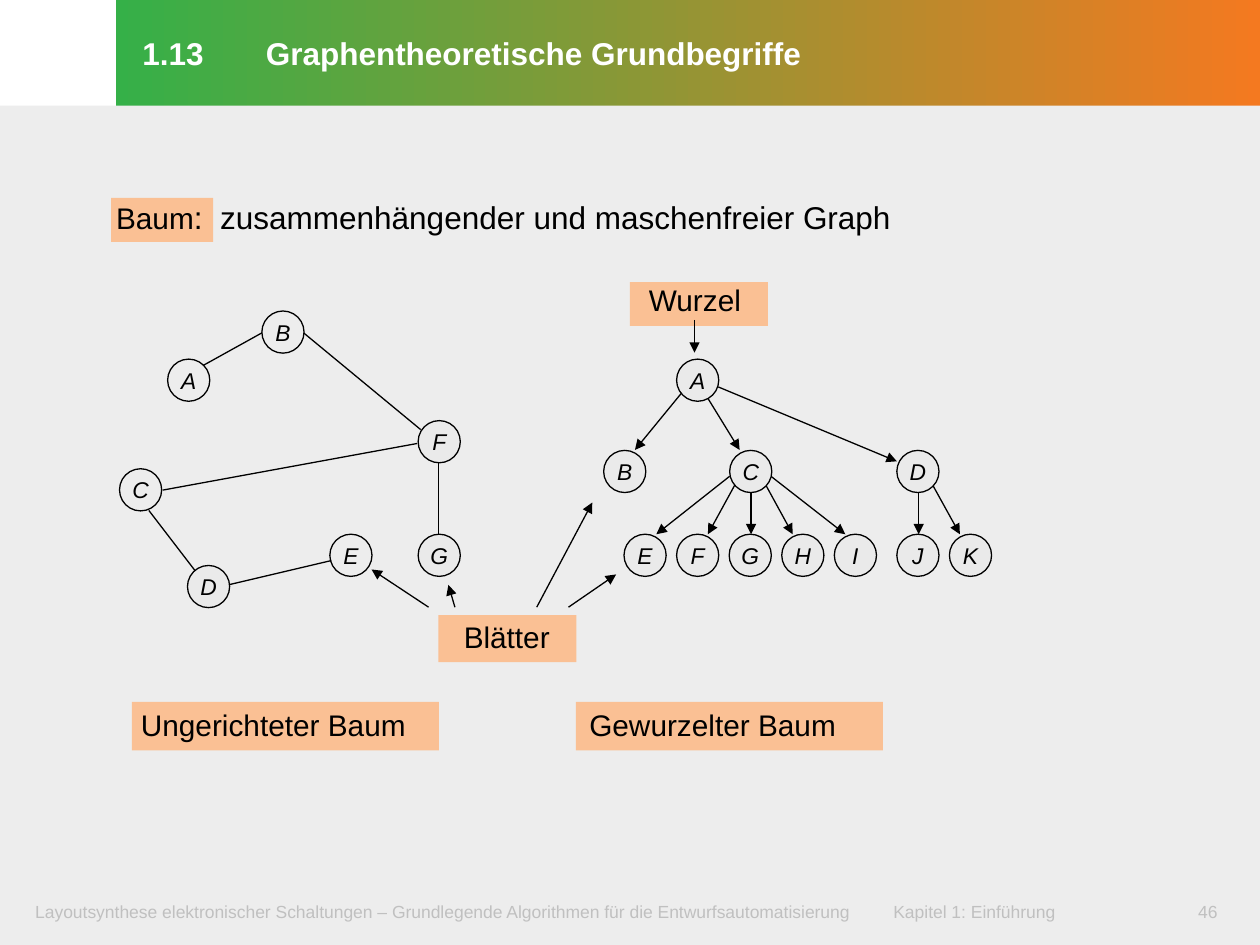
from lxml.etree import SubElement
from pptx import Presentation
from pptx.dml.color import RGBColor
from pptx.enum.shapes import MSO_CONNECTOR, MSO_SHAPE
from pptx.enum.text import MSO_ANCHOR, MSO_AUTO_SIZE, PP_ALIGN
from pptx.oxml.ns import qn
from pptx.util import Cm, Pt

rgb = RGBColor.from_string

prs = Presentation()
prs.slide_width, prs.slide_height = Cm(25.4), Cm(19.05)
s = prs.slides.add_slide(prs.slide_layouts[5])


def add_box(kind, x, y, w, h, fill=None, line=None):
    sp = s.shapes.add_shape(kind, Cm(x), Cm(y), Cm(w), Cm(h))
    sp.shadow.inherit = False
    if fill:
        sp.fill.solid()
        sp.fill.fore_color.rgb = rgb(fill)
    else:
        sp.fill.background()
    if line:
        sp.line.color.rgb = rgb(line)
        sp.line.width = Pt(0.75)
    else:
        sp.line.fill.background()
    return sp


def write(tf, runs, color, insets=(0, 0, 0, 0), anchor=MSO_ANCHOR.TOP,
          align=PP_ALIGN.LEFT, tab=None, bold=False, italic=False):
    tf.margin_left, tf.margin_top, tf.margin_right, tf.margin_bottom = map(Cm, insets)
    tf.word_wrap = True
    tf.auto_size = MSO_AUTO_SIZE.NONE
    tf.vertical_anchor = anchor
    p = tf.paragraphs[0]
    p.alignment = align
    if tab:
        tabs = SubElement(p._p.get_or_add_pPr(), qn("a:tabLst"))
        SubElement(tabs, qn("a:tab"), pos=str(Cm(tab)), algn="l")
    for text, size in runs:
        r = p.add_run()
        r.text = text
        r.font.name = "Arial"
        r.font.size = Pt(size)
        r.font.bold = bold
        r.font.italic = italic
        r.font.color.rgb = rgb(color)
    return p


title = s.shapes.title
title.left, title.top, title.width, title.height = Cm(2.34), Cm(0), Cm(23.06), Cm(2.13)
title.fill.gradient()
title.fill.gradient_angle = 0
for stop, color in zip(title.fill.gradient_stops, ("35B048", "F47920")):
    stop.color.rgb = rgb(color)
p = write(title.text_frame, [("1.13\tGraphentheoretische Grundbegriffe", 18)], "FFFFFF",
          (0.53, 0.13, 0.25, 0.18), MSO_ANCHOR.MIDDLE, tab=2.49, bold=True)
p.line_spacing = Pt(23.5)

add_box(MSO_SHAPE.RECTANGLE, 0, 2.13, 25.4, 16.92, "EDEDED")

footer = "Layoutsynthese elektronischer Schaltungen – Grundlegende Algorithmen für die Entwurfsautomatisierung"
for text, x, w, align, tab in [
    (footer + "\tKapitel 1: Einführung", 0.41, 22.48, PP_ALIGN.LEFT, 17.3),
    ("46", 23.6, 1.5, PP_ALIGN.CENTER, None),
]:
    tb = s.shapes.add_textbox(Cm(x), Cm(18.01), Cm(w), Cm(0.81))
    write(tb.text_frame, [(text, 10)], "C0C0C0", (0.3, 0.15, 0.3, 0.15), align=align, tab=tab)

add_box(MSO_SHAPE.RECTANGLE, 2.24, 3.99, 2.06, 0.89, "FAC094")
tb = s.shapes.add_textbox(Cm(2.34), Cm(3.99), Cm(19.56), Cm(0.76))
write(tb.text_frame, [("Baum", 17), (":\tzusammenhängender und maschenfreier Graph", 18)],
      "000000", tab=2.1)

for text, x, y, w, h, left, top in [
    ("Ungerichteter Baum", 2.66, 14.15, 6.19, 0.98, 0.18, 0.1),
    ("Gewurzelter Baum", 11.61, 14.15, 6.19, 0.98, 0.27, 0.1),
    ("Blätter", 8.84, 12.4, 2.78, 0.95, 0.51, 0.08),
    ("Wurzel", 12.7, 5.69, 2.78, 0.88, 0.38, 0),
]:
    sp = add_box(MSO_SHAPE.RECTANGLE, x, y, w, h, "FAC094")
    write(sp.text_frame, [(text, 17)], "000000", (left, top, 0, 0))

edges = [
    (8.84, 9.3, 8.84, 11),
    (4.09, 7.37, 5.28, 6.71),
    (6.12, 6.71, 8.48, 8.66),
    (3.28, 9.88, 8.41, 8.94),
    (3, 10.29, 4.19, 11.84),
    (4.39, 11.84, 6.68, 11.3),
]
arrows = [
    (14, 6.45, 14, 7.11),
    (13.84, 7.8, 12.8, 9.07),
    (14.27, 8.03, 14.91, 9.07),
    (14.48, 7.8, 18.08, 9.3),
    (14.71, 9.6, 13.23, 10.77),
    (14.91, 9.6, 14.27, 10.77),
    (15.14, 9.6, 15.14, 10.77),
    (15.34, 9.6, 15.98, 10.77),
    (15.54, 9.6, 17.04, 10.77),
    (18.52, 9.5, 18.52, 10.77),
    (18.72, 9.63, 19.35, 10.77),
    (9.17, 12.24, 9.04, 11.79),
    (8.64, 12.24, 7.49, 11.48),
    (10.82, 12.24, 11.94, 10.13),
    (11.46, 12.24, 12.42, 11.58),
]
for ends in edges + arrows:
    c = s.shapes.add_connector(MSO_CONNECTOR.STRAIGHT, *map(Cm, ends))
    c.line.color.rgb = rgb("000000")
    c.line.width = Pt(0.75)
    if ends in arrows:
        SubElement(c.line._get_or_add_ln(), qn("a:tailEnd"), type="triangle")
    SubElement(c._element.spPr, qn("a:effectLst"))

undirected = [
    ("A", 3.38, 7.24, None),
    ("B", 5.28, 6.27, None),
    ("C", 2.41, 9.45, None),
    ("D", 3.78, 11.4, "EAEAEA"),
    ("E", 6.65, 10.77, None),
    ("F", 8.43, 8.48, "EAEAEA"),
    ("G", 8.43, 10.77, "EAEAEA"),
]
rooted = [("A", 13.64, 7.24), ("B", 12.17, 9.08), ("C", 14.71, 9.08), ("D", 18.08, 9.08)]
rooted += [(name, 12.58 + 1.06 * i, 10.77) for i, name in enumerate("EFGHI")]
rooted += [(name, 18.08 + 1.06 * i, 10.77) for i, name in enumerate("JK")]
for name, x, y, fill in undirected + [(*node, "EAEAEA") for node in rooted]:
    sp = add_box(MSO_SHAPE.OVAL, x, y, 0.85, 0.85, fill, "000000")
    write(sp.text_frame, [(name, 13)], "000000", anchor=MSO_ANCHOR.MIDDLE,
          align=PP_ALIGN.CENTER, italic=True)
    sp.text_frame.word_wrap = False

prs.save("out.pptx")
